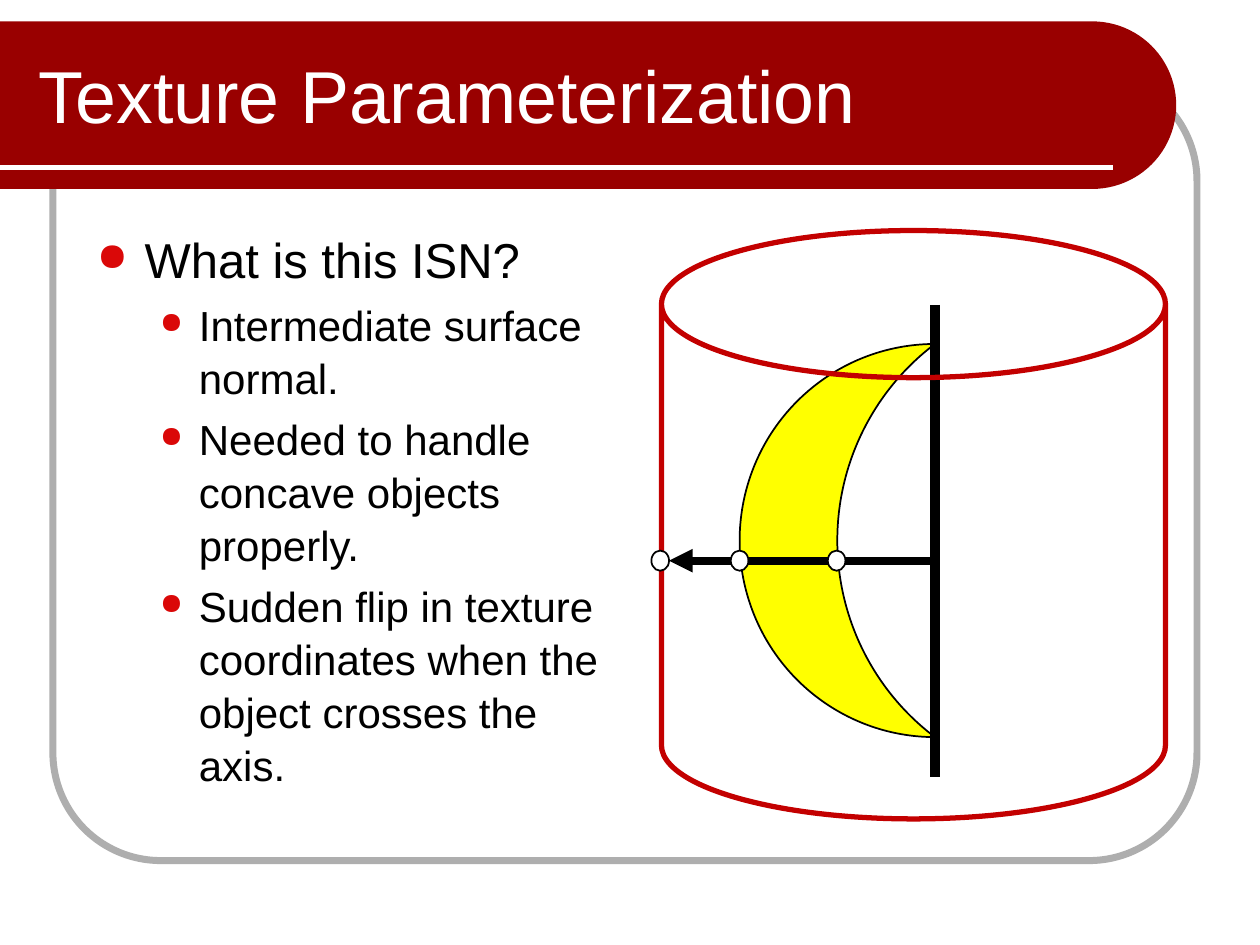
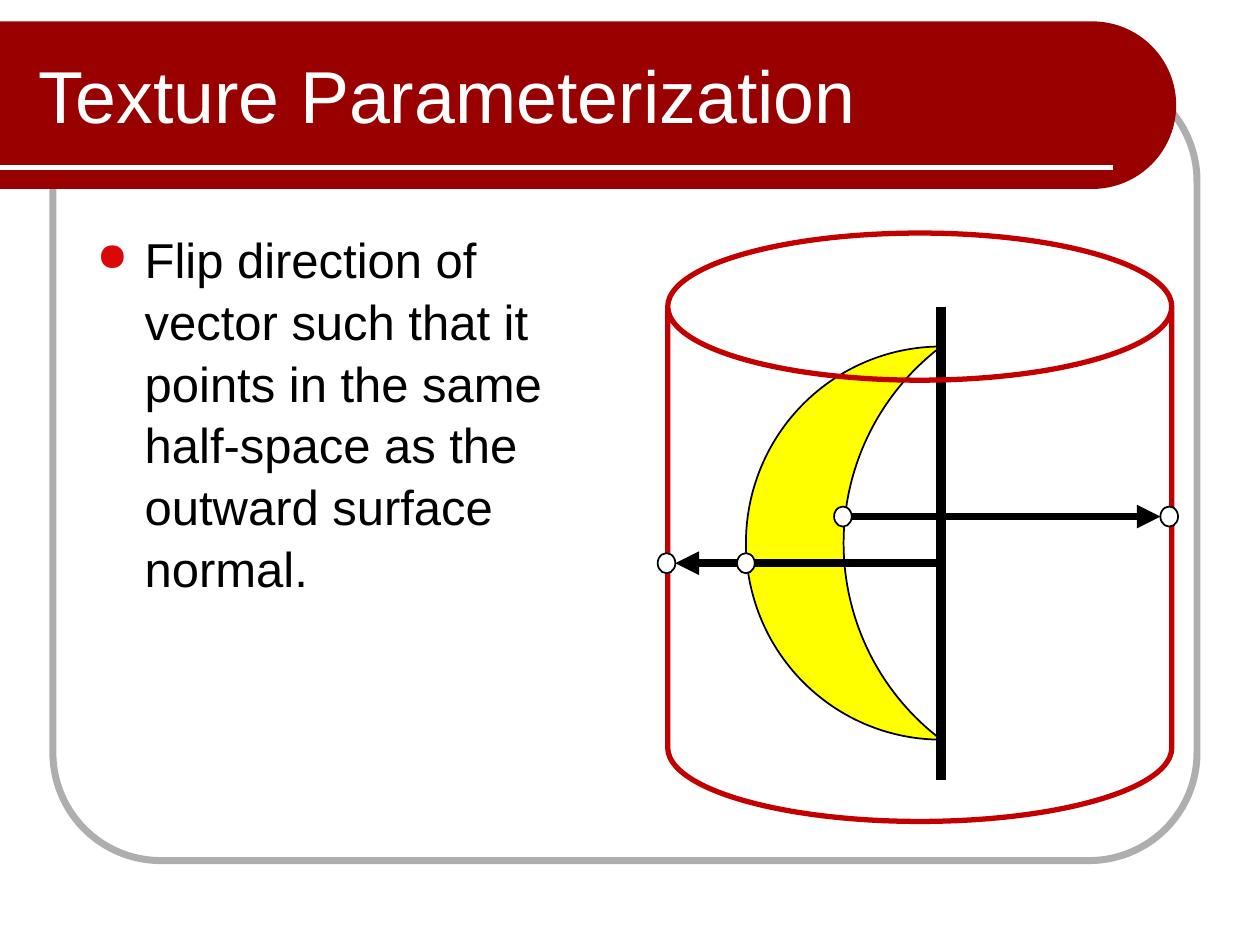
from math import cos, pi, sin

from lxml import etree
from pptx import Presentation
from pptx.dml.color import RGBColor
from pptx.enum.shapes import MSO_CONNECTOR, MSO_SHAPE
from pptx.enum.text import MSO_ANCHOR
from pptx.oxml.ns import qn
from pptx.util import Inches, Pt

STRAIGHT = MSO_CONNECTOR.STRAIGHT
ROUNDED, MOON = MSO_SHAPE.ROUNDED_RECTANGLE, MSO_SHAPE.MOON
CAN, OVAL = MSO_SHAPE.CAN, MSO_SHAPE.OVAL
TOP, MIDDLE = MSO_ANCHOR.TOP, MSO_ANCHOR.MIDDLE

FONT = "Arial"
COLORS = {
    "band": "990000",
    "frame": "AEAEAE",
    "bullet": "DA0808",
    "cylinder": "C30000",
    "moon": "FFFF00",
    "ink": "000000",
    "paper": "FFFFFF",
}
LEVELS = [
    {"size": 28, "left": 0.38, "hang": 0.38, "bullet": 80},
    {"size": 24, "left": 0.81, "hang": 0.31, "bullet": 70},
]


def rgb(name):
    return RGBColor.from_string(COLORS[name])


def paint(shape, fill=None, line=None, width=1):
    shape.shadow.inherit = False
    if fill:
        shape.fill.solid()
        shape.fill.fore_color.rgb = rgb(fill)
    else:
        shape.fill.background()
    if line:
        shape.line.color.rgb = rgb(line)
        shape.line.width = Pt(width)
    else:
        shape.line.fill.background()


def add_figure(page, kind, area, adjustment=None, **style):
    shape = page.shapes.add_shape(kind, *map(Inches, area))
    if adjustment is not None:
        shape.adjustments[0] = adjustment
    paint(shape, **style)


def add_line(page, start, end, color, width, arrow=False):
    line = page.shapes.add_connector(STRAIGHT, *map(Inches, start + end))
    line.line.color.rgb = rgb(color)
    line.line.width = Pt(width)
    if arrow:
        etree.SubElement(line.line._get_or_add_ln(), qn("a:tailEnd"), type="triangle")
    etree.SubElement(line._element.spPr, qn("a:effectLst"))


def add_band(page):
    left, middle, radius, steps = 8.67, 0.835, 0.665, 48
    angles = [pi * step / steps - pi / 2 for step in range(steps + 1)]
    curve = [
        (Inches(left + radius * cos(angle)), Inches(middle + radius * sin(angle)))
        for angle in angles
    ]
    outline = page.shapes.build_freeform(0, Inches(middle - radius))
    outline.add_line_segments(curve + [(0, Inches(middle + radius))], close=True)
    paint(outline.convert_to_shape(), fill="band")


def add_box(page, area, anchor):
    frame = page.shapes.add_textbox(*map(Inches, area)).text_frame
    frame.word_wrap = True
    frame.vertical_anchor = anchor
    return frame


def add_span(para, text, size, color):
    span = para.add_run()
    span.text = text
    span.font.name = FONT
    span.font.size = Pt(size)
    span.font.color.rgb = rgb(color)


def add_bullet(para, style):
    properties = para._p.get_or_add_pPr()
    properties.set("marL", str(Inches(style["left"])))
    properties.set("indent", str(-Inches(style["hang"])))
    color = etree.SubElement(properties, qn("a:buClr"))
    etree.SubElement(color, qn("a:srgbClr"), val=COLORS["bullet"])
    etree.SubElement(properties, qn("a:buSzPct"), val=str(style["bullet"] * 1000))
    etree.SubElement(properties, qn("a:buChar"), char="●")


def add_points(page, points):
    frame = add_box(page, (0.67, 1.75, 4.25, 4.83), TOP)
    for index, (level, text) in enumerate(points):
        para = frame.add_paragraph() if index else frame.paragraphs[0]
        style = LEVELS[level]
        add_bullet(para, style)
        para.level = level
        para.line_spacing = 1.05
        if index:
            para.space_before = Pt(style["size"] * 0.2)
        add_span(para, text, style["size"], "ink")


def add_page(deck, title, points):
    page = deck.slides.add_slide(deck.slide_layouts[6])
    add_figure(page, ROUNDED, (0.42, 0.58, 9.08, 6.25), 0.137, line="frame", width=4)
    add_band(page)
    add_line(page, (0, 1.33), (8.83, 1.33), "paper", 3)
    frame = add_box(page, (0.21, 0.25, 7.79, 1), MIDDLE)
    add_span(frame.paragraphs[0], title, 42, "paper")
    add_points(page, points)
    return page


def add_cylinder_mapping(page, left, top, arrows, markers):
    def place(x, y):
        return left + x, top + y

    axis = 2.17
    add_figure(page, MOON, place(0.62, 0.9) + (1.55, 3.12), 0.5, fill="moon", line="ink")
    add_line(page, place(axis, 0.59), place(axis, 4.34), "ink", 6)
    for start, end, height in arrows:
        add_line(page, place(start, height), place(end, height), "ink", 4.5, arrow=True)
    add_figure(page, CAN, (left, top, 4, 4.67), 0.292, line="cylinder", width=3)
    width, height = 0.14, 0.16
    for x, y in markers:
        corner = place(x - width / 2, y - height / 2)
        add_figure(page, OVAL, corner + (width, height), fill="paper", line="ink")


def main():
    deck = Presentation()
    deck.slide_width, deck.slide_height = Inches(10), Inches(7.5)
    title = "Texture Parameterization"
    normal_y, flipped_y = 2.62, 2.25
    wall, outer, inner, far_wall = -0.01, 0.62, 1.39, 3.98
    normal = (2.17, 0.06, normal_y)
    flipped = (1.41, 3.91, flipped_y)

    page = add_page(deck, title, [
        (0, "What is this ISN?"),
        (1, "Intermediate surface normal."),
        (1, "Needed to handle concave objects properly."),
        (1, "Sudden flip in texture coordinates when the object crosses the axis."),
    ])
    add_cylinder_mapping(page, 5.25, 1.83, [normal],
                         [(x, normal_y) for x in (wall, outer, inner)])

    page = add_page(deck, title, [
        (0, "Flip direction of vector such that it points in the same half-space "
            "as the outward surface normal."),
    ])
    add_cylinder_mapping(page, 5.3, 1.85, [normal, flipped],
                         [(wall, normal_y), (outer, normal_y),
                          (inner, flipped_y), (far_wall, flipped_y)])
    deck.save("out.pptx")


if __name__ == "__main__":
    main()
